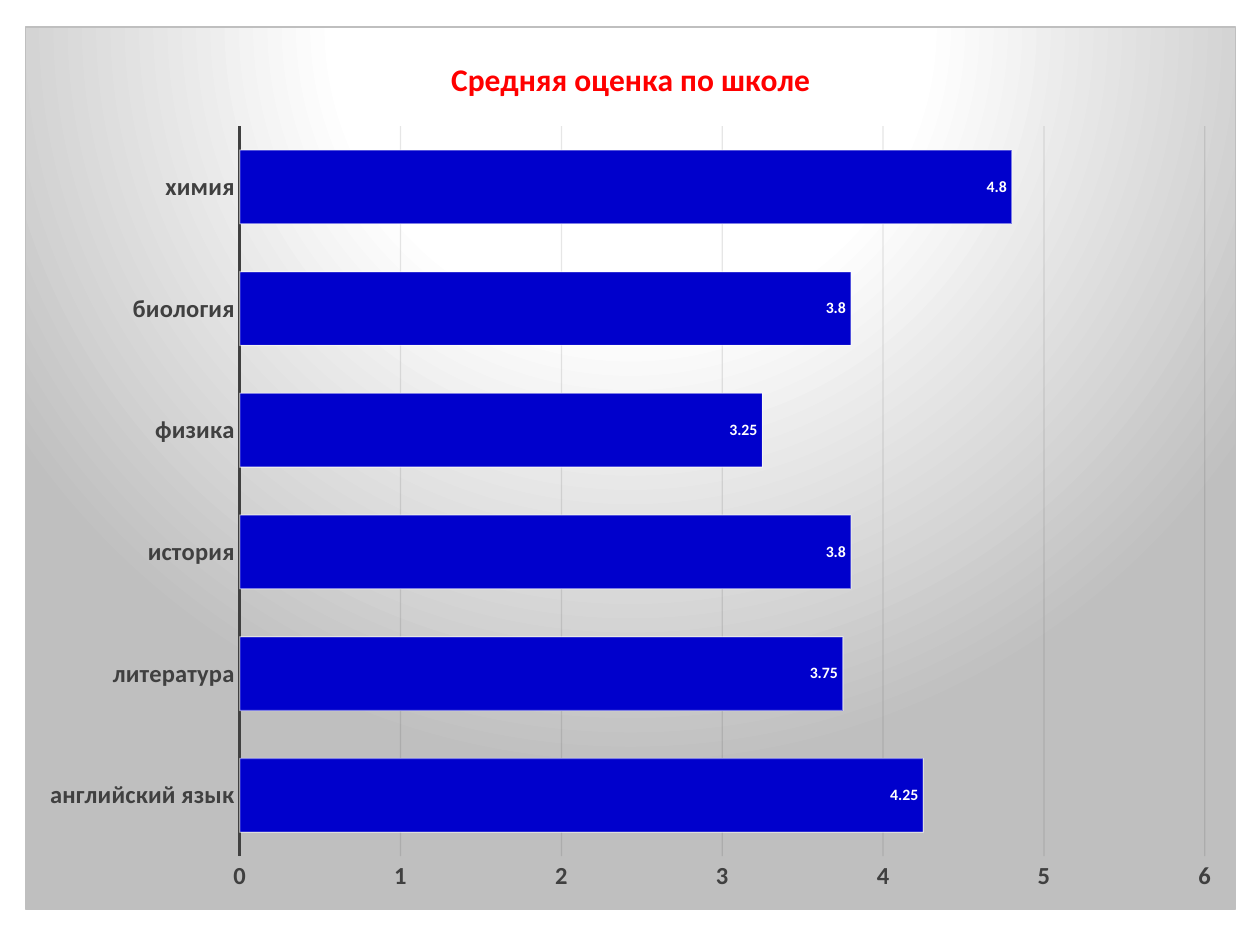
from lxml import etree
from pptx import Presentation
from pptx.chart.data import CategoryChartData
from pptx.dml.color import RGBColor
from pptx.enum.chart import XL_CHART_TYPE, XL_LABEL_POSITION, XL_TICK_MARK
from pptx.oxml import parse_xml
from pptx.oxml.ns import nsdecls, qn
from pptx.util import Inches, Pt

BAR_CLUSTERED = XL_CHART_TYPE.BAR_CLUSTERED
INSIDE_END = XL_LABEL_POSITION.INSIDE_END
NO_TICK = XL_TICK_MARK.NONE

BLACK = RGBColor(0x00, 0x00, 0x00)
WHITE = RGBColor(0xFF, 0xFF, 0xFF)
RED = RGBColor(0xFF, 0x00, 0x00)
BLUE = RGBColor(0x00, 0x00, 0xCC)
DARK_GREY = RGBColor(0x40, 0x40, 0x40)
NEAR_BLACK = RGBColor(0x0D, 0x0D, 0x0D)
SILVER = RGBColor(0xBF, 0xBF, 0xBF)

AVERAGE_GRADES = {
    "английский язык": 4.25,
    "литература": 3.75,
    "история": 3.8,
    "физика": 3.25,
    "биология": 3.8,
    "химия": 4.8,
}


def style_font(font, size, color, bold=True):
    for attribute, value in {"name": "Calibri", "size": Pt(size), "bold": bold}.items():
        setattr(font, attribute, value)
    font.color.rgb = color


def style_line(line, color, width, opacity=100):
    line.color.rgb = color
    line.width = Pt(width)
    if opacity < 100:
        tint = line.fill._xPr.find(".//" + qn("a:srgbClr"))
        etree.SubElement(tint, qn("a:alpha"), val=str(opacity * 1000))


prs = Presentation()
prs.slide_width, prs.slide_height = Inches(10), Inches(7.5)
slide = prs.slides.add_slide(prs.slide_layouts[6])

# Chart with the average grade per subject
grades_data = CategoryChartData()
grades_data.categories = list(AVERAGE_GRADES)
grades_data.add_series("Series 1", list(AVERAGE_GRADES.values()))
grades = slide.shapes.add_chart(
    BAR_CLUSTERED, Inches(0.2), Inches(0.21), Inches(9.61), Inches(7.01), grades_data
).chart
style_font(grades.font, 10, BLACK, bold=False)
grades.has_legend = False

# Title
grades.has_title = True
heading = grades.chart_title.text_frame
heading.text = "Средняя оценка по школе"
style_font(heading.paragraphs[0].runs[0].font, 18, RED)
grades.chart_title.include_in_layout = False

# Axes
subjects, scale = grades.category_axis, grades.value_axis
for axis in (subjects, scale):
    axis.major_tick_mark = axis.minor_tick_mark = NO_TICK
    style_font(axis.tick_labels.font, 14, DARK_GREY)
style_line(subjects.format.line, DARK_GREY, 1.5)
scale.minimum_scale, scale.maximum_scale, scale.major_unit = 0, 6, 1
scale.format.line.fill.background()
style_line(scale.major_gridlines.format.line, NEAR_BLACK, 0.75, opacity=10)

# Bars and their values
plot = grades.plots[0]
plot.gap_width = 65
plot.vary_by_categories = False
bars = plot.series[0]
bars.format.fill.solid()
bars.format.fill.fore_color.rgb = BLUE
style_line(bars.format.line, WHITE, 0.75, opacity=50)
bar_values = bars.data_labels
bar_values.show_value = True
bar_values.position = INSIDE_END
style_font(bar_values.font, 9, WHITE)

# Radial backdrop and border of the chart area
stops = "".join(
    f'<a:gs pos="{share * 1000}"><a:srgbClr val="{color}"/></a:gs>'
    for share, color in ((0, WHITE), (39, WHITE), (100, SILVER))
)
backdrop = parse_xml(
    f'<c:spPr {nsdecls("c", "a")}><a:gradFill><a:gsLst>{stops}</a:gsLst>'
    '<a:path path="circle"><a:fillToRect l="50000" t="-80000" r="50000" b="180000"/></a:path>'
    f'</a:gradFill><a:ln w="{Pt(0.75)}"><a:solidFill><a:srgbClr val="{SILVER}"/>'
    "</a:solidFill></a:ln></c:spPr>"
)
grades.element.find(qn("c:chart")).addnext(backdrop)

prs.save("out.pptx")
